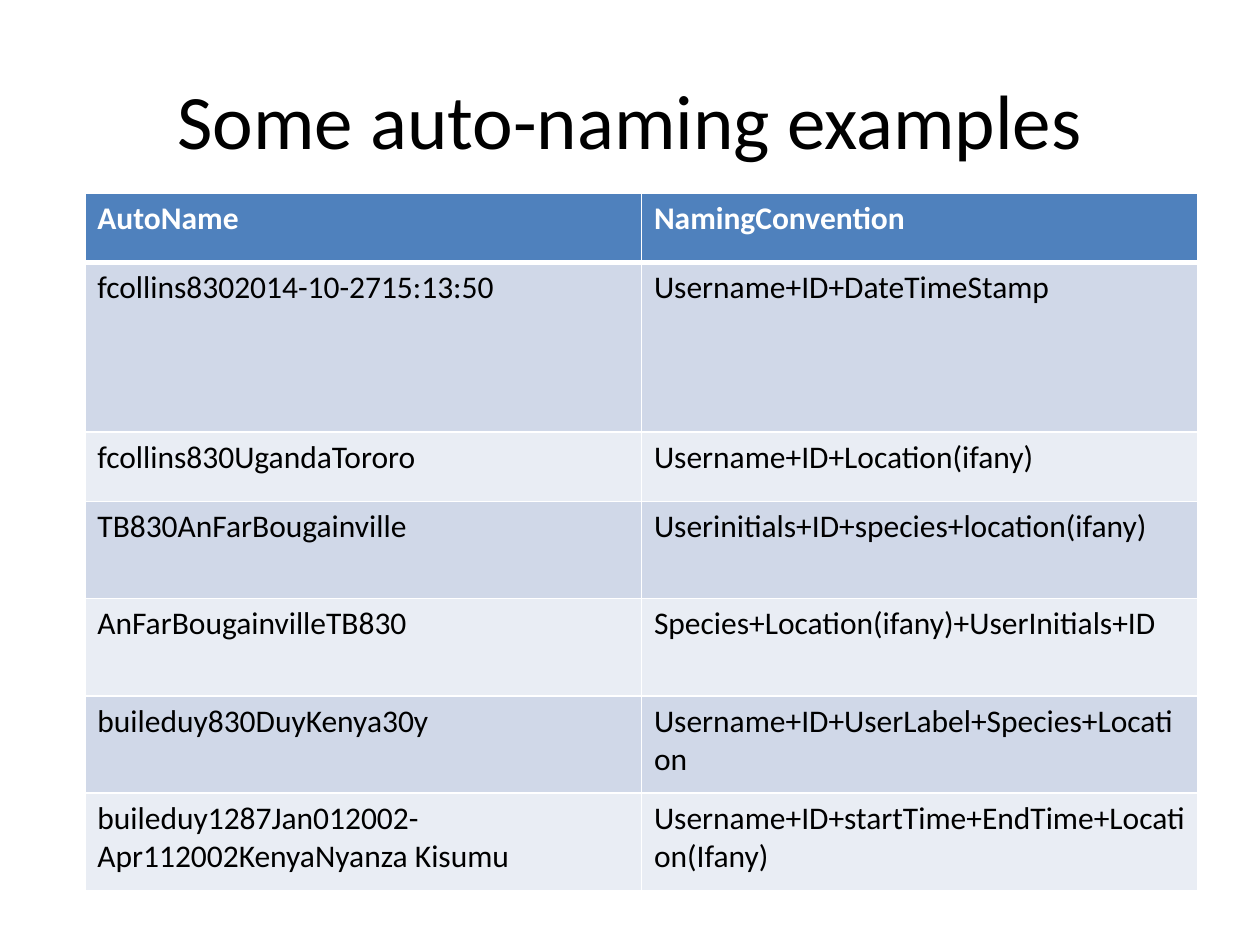
from lxml import etree
from pptx import Presentation
from pptx import util as u
from pptx.dml.color import RGBColor
from pptx.enum import text
from pptx.oxml import ns

BLACK = RGBColor(0x00, 0x00, 0x00)
WHITE = RGBColor(0xFF, 0xFF, 0xFF)
BLUE = RGBColor(0x4F, 0x81, 0xBD)
BANDS = RGBColor(0xE9, 0xED, 0xF4), RGBColor(0xD0, 0xD8, 0xE8)

ROWS = [
    ("AutoName", "NamingConvention"),
    ("fcollins8302014-10-2715:13:50", "Username+ID+DateTimeStamp"),
    ("fcollins830UgandaTororo", "Username+ID+Location(ifany)"),
    ("TB830AnFarBougainville", "Userinitials+ID+species+location(ifany)"),
    ("AnFarBougainvilleTB830", "Species+Location(ifany)+UserInitials+ID"),
    ("buileduy830DuyKenya30y", "Username+ID+UserLabel+Species+Location"),
    ("buileduy1287Jan012002-Apr112002KenyaNyanza Kisumu",
     "Username+ID+startTime+EndTime+Location(Ifany)"),
]
HEIGHTS = [1.4, 3.42, 1.4] + [1.96] * 4


class Deck:
    """Holds the style and the current slide."""
    face = "Calibri"

    def __init__(self, slide):
        self.slide = slide

    def font(self, para, size, color, bold=False):
        font = para.font
        font.name, font.size, font.bold = self.face, u.Pt(size), bold
        font.color.rgb = color

    def title(self, words, *box):
        frame = self.slide.shapes.add_textbox(*map(u.Cm, box)).text_frame
        frame.word_wrap = True
        frame.vertical_anchor = text.MSO_ANCHOR.MIDDLE
        para = frame.paragraphs[0]
        para.text = words
        para.alignment = text.PP_ALIGN.CENTER
        self.font(para, 44, BLACK)

    def edge(self, cell, sides):
        """Draw white borders; sides maps a border tag to its points."""
        props = cell._tc.get_or_add_tcPr()
        for spot, (side, width) in enumerate(sides.items()):
            line = etree.Element(ns.qn("a:" + side), w=str(u.Pt(width)))
            fill = etree.SubElement(line, ns.qn("a:solidFill"))
            etree.SubElement(fill, ns.qn("a:srgbClr"), val=str(WHITE))
            props.insert(spot, line)

    def table(self, rows, heights, left, top, width):
        cols = len(rows[0])
        grid = self.slide.shapes.add_table(
            len(rows), cols, u.Cm(left), u.Cm(top),
            u.Cm(width), u.Cm(sum(heights))).table
        for r, (row, height) in enumerate(zip(rows, heights)):
            grid.rows[r].height = u.Cm(height)
            head = r == 0
            for c, words in enumerate(row):
                cell = grid.cell(r, c)
                cell.text = words
                self.font(cell.text_frame.paragraphs[0], 18,
                          WHITE if head else BLACK, head)
                cell.fill.solid()
                cell.fill.fore_color.rgb = BLUE if head else BANDS[r % 2]
                # The line under the header is thicker
                self.edge(cell, {"lnL": 1, "lnR": 1,
                                 "lnT": 3 if r == 1 else 1,
                                 "lnB": 3 if head else 1})


def main():
    prs = Presentation()
    prs.slide_width, prs.slide_height = u.Cm(25.4), u.Cm(19.05)
    deck = Deck(prs.slides.add_slide(prs.slide_layouts[6]))

    # Title
    deck.title("Some auto-naming examples", 1.27, 0.8, 22.86, 3.18)

    # Table of examples
    deck.table(ROWS, HEIGHTS, 1.71, 3.89, 22.44)

    prs.save("out.pptx")


if __name__ == "__main__":
    main()
